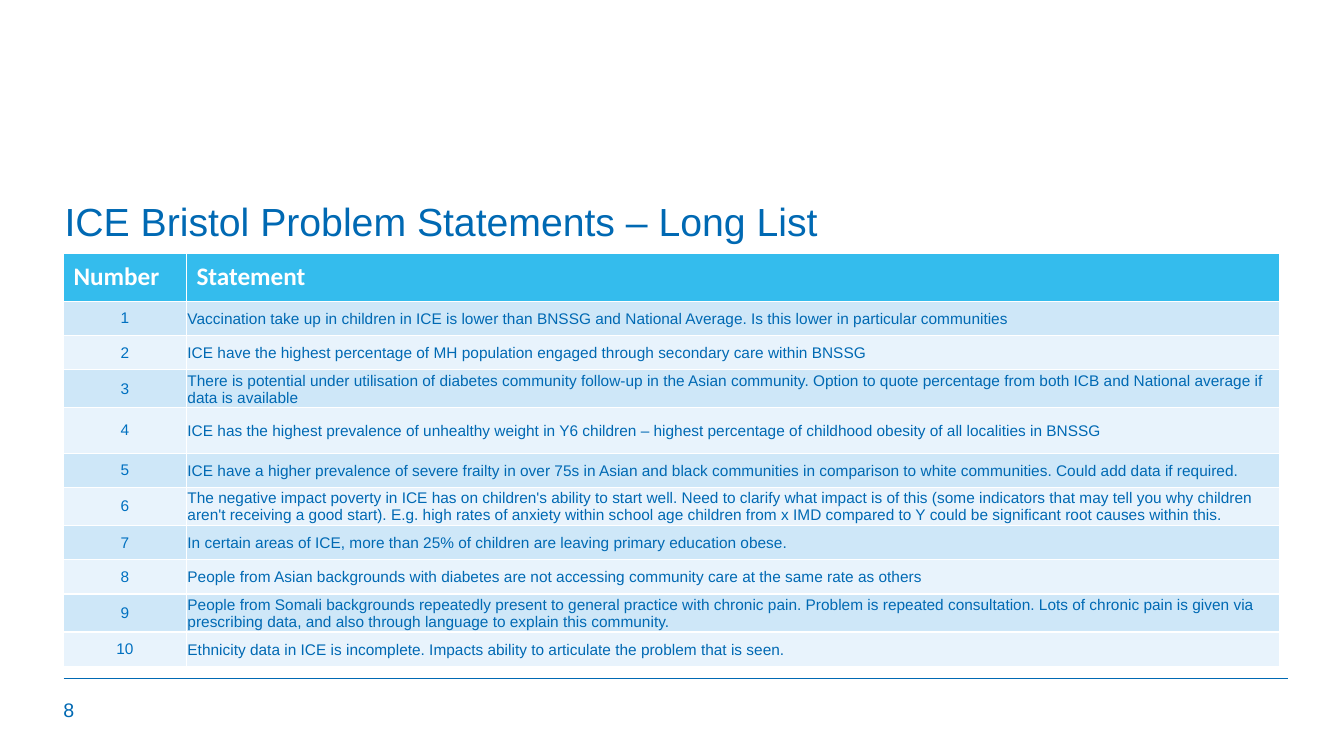
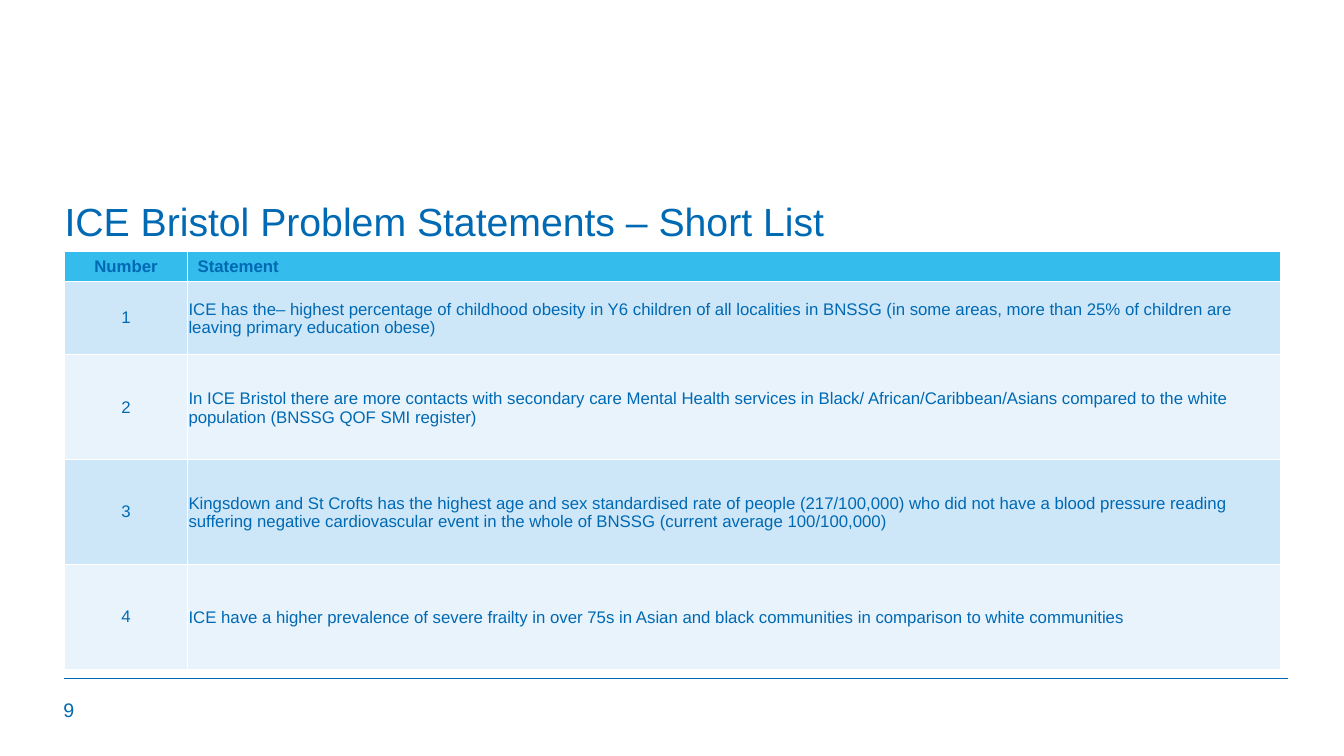
from lxml.etree import SubElement
from pptx import Presentation
from pptx.dml.color import RGBColor
from pptx.enum.shapes import MSO_CONNECTOR
from pptx.enum.text import MSO_ANCHOR as ANCHOR, PP_ALIGN as ALIGN
from pptx.oxml.ns import qn
from pptx.util import Pt

PX = 9144
BLUE = RGBColor(0x00, 0x69, 0xB3)
NUMBER_BLUE = RGBColor(0x00, 0x70, 0xC0)
CYAN = RGBColor(0x34, 0xBC, 0xED)
BANDS = (RGBColor(0xCE, 0xE7, 0xF8), RGBColor(0xE8, 0xF3, 0xFC))
WHITE = RGBColor(0xFF, 0xFF, 0xFF)

COLUMNS = (122, 1084)
HEADERS = ("Number", "Statement")

SLIDES = [
    {
        "page": 8,
        "title": "ICE Bristol Problem Statements – Long List",
        "origin": (63, 251),
        "rows": [48, 34, 34, 34, 45, 34, 34, 34, 34, 34, 34],
        "header": ("Calibri", 18, WHITE, ALIGN.LEFT),
        "size": 11,
        "number_color": NUMBER_BLUE,
        "statements": [
            "Vaccination take up in children in ICE is lower than BNSSG and National Average. "
            "Is this lower in particular communities",
            "ICE have the highest percentage of MH population engaged through secondary care within BNSSG",
            "There is potential under utilisation of diabetes community follow-up in the Asian community. "
            "Option to quote percentage from both ICB and National average if data is available",
            "ICE has the highest prevalence of unhealthy weight in Y6 children – "
            "highest percentage of childhood obesity of all localities in BNSSG",
            "ICE have a higher prevalence of severe frailty in over 75s in Asian and black communities "
            "in comparison to white communities. Could add data if required.",
            "The negative impact poverty in ICE has on children's ability to start well. "
            "Need to clarify what impact is of this (some indicators that may tell you why children "
            "aren't receiving a good start). E.g. high rates of anxiety within school age children "
            "from x IMD compared to Y could be significant root causes within this.",
            "In certain areas of ICE, more than 25% of children are leaving primary education obese.",
            "People from Asian backgrounds with diabetes are not accessing community care "
            "at the same rate as others",
            "People from Somali backgrounds repeatedly present to general practice with chronic pain. "
            "Problem is repeated consultation. Lots of chronic pain is given via prescribing data, "
            "and also through language to explain this community.",
            "Ethnicity data in ICE is incomplete. Impacts ability to articulate the problem that is seen.",
        ],
    },
    {
        "page": 9,
        "title": "ICE Bristol Problem Statements – Short List",
        "origin": (64, 249),
        "rows": [29, 73, 104, 104, 104],
        "header": ("Arial", 12, BLUE, ALIGN.CENTER),
        "size": 12,
        "number_color": BLUE,
        "statements": [
            "ICE has the– highest percentage of childhood obesity in Y6 children of all localities in BNSSG "
            "(in some areas, more than 25% of children are leaving primary education obese)",
            "In ICE Bristol there are more contacts with secondary care Mental Health services in "
            "Black/ African/Caribbean/Asians compared to the white population (BNSSG QOF SMI register)",
            "Kingsdown and St Crofts has the highest age and sex standardised rate of people (217/100,000) "
            "who did not have a blood pressure reading suffering negative cardiovascular event "
            "in the whole of BNSSG (current average 100/100,000)",
            "ICE have a higher prevalence of severe frailty in over 75s in Asian and black communities "
            "in comparison to white communities",
        ],
    },
]


def px(*values):
    return [v * PX for v in values]


def set_text(tf, text, size, color, name="Arial", bold=False, align=ALIGN.LEFT):
    tf.text = text
    p = tf.paragraphs[0]
    p.alignment = align
    font = p.runs[0].font
    font.name, font.size, font.bold = name, Pt(size), bold
    font.color.rgb = color
    return p


def add_text(s, box, text, size):
    tf = s.shapes.add_textbox(*px(*box)).text_frame
    tf.word_wrap = True
    tf.margin_left = tf.margin_top = tf.margin_right = tf.margin_bottom = 0
    return set_text(tf, text, size, BLUE)


def add_footer(s, page):
    line = s.shapes.add_connector(MSO_CONNECTOR.STRAIGHT, *px(63, 673, 1277, 673))
    line.line.color.rgb = BLUE
    line.line.width = Pt(1)
    SubElement(line._element.spPr, qn("a:effectLst"))
    add_text(s, (63, 692, 47, 40), str(page), 14)


def fill_cell(cell, color):
    cell.fill.solid()
    cell.fill.fore_color.rgb = color
    cell.vertical_anchor = ANCHOR.MIDDLE


def add_statements(s, data):
    rows = data["rows"]
    size = data["size"]
    box = px(*data["origin"], sum(COLUMNS), sum(rows))
    table = s.shapes.add_table(len(rows), len(COLUMNS), *box).table
    for column, width in zip(table.columns, COLUMNS):
        column.width = width * PX
    for row, height in zip(table.rows, rows):
        row.height = height * PX

    name, header_size, header_color, number_align = data["header"]
    for i, (text, align) in enumerate(zip(HEADERS, (number_align, ALIGN.LEFT))):
        cell = table.cell(0, i)
        fill_cell(cell, CYAN)
        set_text(cell.text_frame, text, header_size, header_color, name, True, align)

    for i, text in enumerate(data["statements"], 1):
        number, statement = table.cell(i, 0), table.cell(i, 1)
        for cell in (number, statement):
            fill_cell(cell, BANDS[(i - 1) % 2])
        set_text(number.text_frame, str(i), size, data["number_color"], align=ALIGN.CENTER)
        statement.margin_left = statement.margin_top = statement.margin_right = PX
        statement.margin_bottom = 0
        set_text(statement.text_frame, text, size, BLUE)


def main():
    prs = Presentation()
    prs.slide_width, prs.slide_height = px(1333, 750)
    for data in SLIDES:
        s = prs.slides.add_slide(prs.slide_layouts[6])
        add_footer(s, data["page"])
        add_statements(s, data)
        title = add_text(s, (64, 201, 1098, 36), data["title"], 28)
        title.line_spacing = 0.9
    prs.save("out.pptx")


if __name__ == "__main__":
    main()
